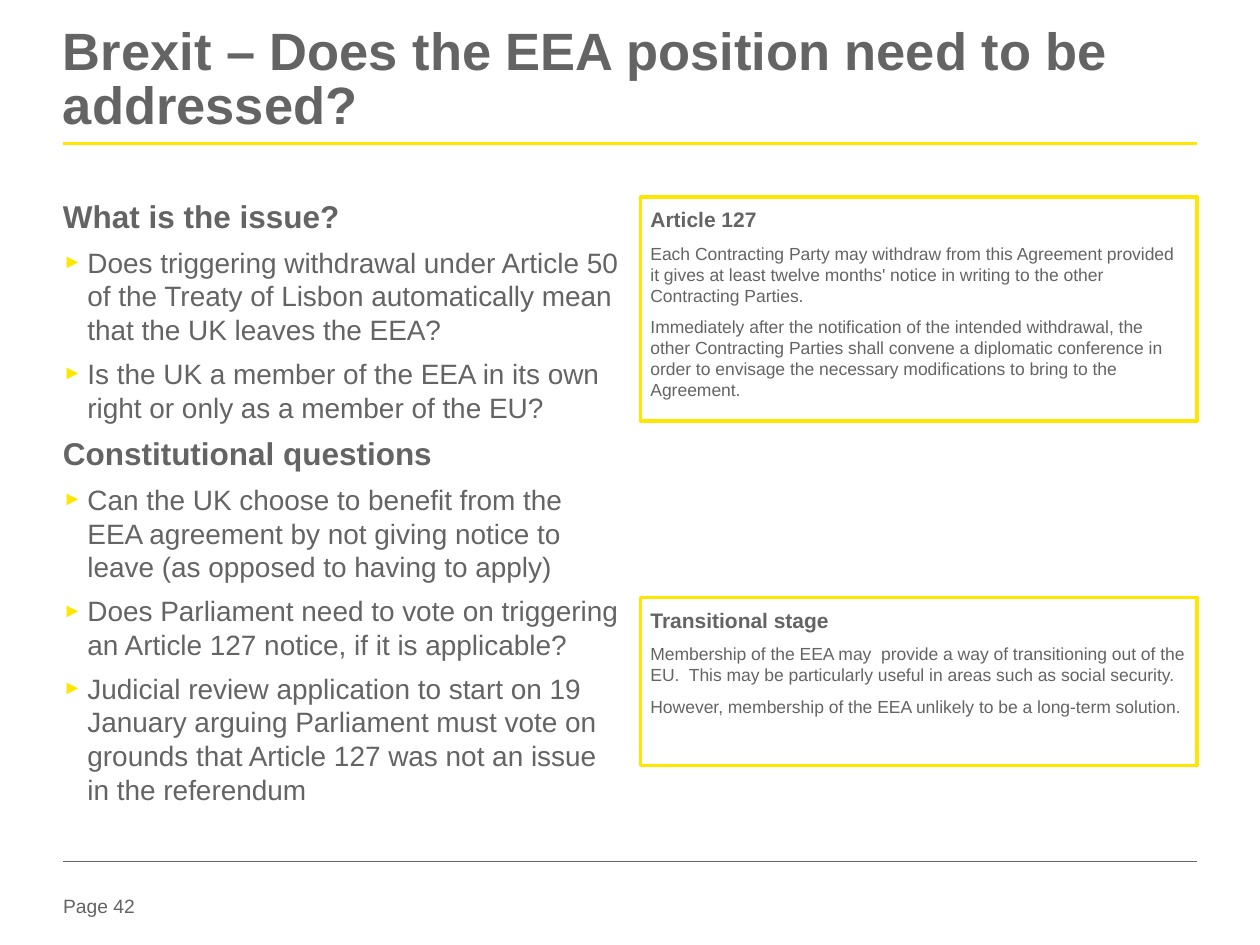
from lxml.etree import SubElement as Sub
from pptx import Presentation
from pptx.dml.color import RGBColor as Rgb
from pptx.enum.shapes import MSO_CONNECTOR as Conn, MSO_SHAPE as Kind
from pptx.enum.text import MSO_ANCHOR as Anchor, PP_ALIGN as Align
from pptx.oxml.ns import qn
from pptx.util import Pt

HUE = {"text": "646464", "accent": "FFE600"}
LEFT, RIGHT = 36, 684
COL = 318  # column width
TOP = 112.5

deck = Presentation()
deck.slide_width, deck.slide_height = Pt(720), Pt(540)
slide = deck.slides.add_slide(deck.slide_layouts[6])
shapes = slide.shapes


def write(shape, paras, inset=0, after=0, line=None):
    """Fill a shape with (text, size, bold, bullet) paragraphs."""
    frame = shape.text_frame
    frame.word_wrap = True
    frame.vertical_anchor = Anchor.TOP
    frame.margin_left = frame.margin_right = Pt(inset)
    frame.margin_top = frame.margin_bottom = Pt(inset)
    for i, (text, size, bold, bullet) in enumerate(paras):
        para = frame.add_paragraph() if i else frame.paragraphs[0]
        para.alignment = Align.LEFT
        para.space_after = Pt(after)
        if line:
            para.line_spacing = line
        run = para.add_run()
        run.text = text
        font = run.font
        font.name, font.size, font.bold = "Arial", Pt(size), bold
        font.color.rgb = Rgb.from_string(HUE["text"])
        if bullet:
            props = para._p.get_or_add_pPr()
            props.set("marL", str(Pt(14)))
            props.set("indent", str(Pt(-14)))
            tint = Sub(props, qn("a:buClr"))
            Sub(tint, qn("a:srgbClr"), val=HUE["accent"])
            Sub(props, qn("a:buSzPct"), val="70000")
            Sub(props, qn("a:buFont"), typeface="Arial")
            Sub(props, qn("a:buChar"), char="►")


# Rules under the title and above the footer
for y, hue, width in [(82, "accent", 1.5), (492, "text", 0.25)]:
    rule = shapes.add_connector(Conn.STRAIGHT, Pt(LEFT), Pt(y), Pt(RIGHT), Pt(y))
    rule.line.color.rgb = Rgb.from_string(HUE[hue])
    rule.line.width = Pt(width)
    Sub(rule._element.spPr, qn("a:effectLst"))

# Title and page number
title = shapes.add_textbox(Pt(LEFT), Pt(16), Pt(RIGHT - LEFT), Pt(67.5))
write(title, [("Brexit – Does the EEA position need to be addressed?", 30, True, False)],
      line=0.85)
page = shapes.add_textbox(Pt(LEFT), Pt(511), Pt(57), Pt(16))
write(page, [("Page 42", 11, False, False)])

# Left column: headings with bullets
topics = {
    "What is the issue?": [
        "Does triggering withdrawal under Article 50 of the Treaty of Lisbon "
        "automatically mean that the UK leaves the EEA?",
        "Is the UK a member of the EEA in its own right or only as a member of the EU?",
    ],
    "Constitutional questions": [
        "Can the UK choose to benefit from the EEA agreement by not giving notice "
        "to leave (as opposed to having to apply)",
        "Does Parliament need to vote on triggering an Article 127 notice, "
        "if it is applicable?",
        "Judicial review application to start on 19 January arguing Parliament must "
        "vote on grounds that Article 127 was not an issue in the referendum",
    ],
}
paras = []
for head, points in topics.items():
    paras.append((head, 18, True, False))
    paras += [(point, 16, False, True) for point in points]
body = shapes.add_textbox(Pt(LEFT), Pt(TOP), Pt(COL), Pt(370))
write(body, paras, after=6)

# Right column: framed notes
notes = [
    (TOP, 128, "Article 127", [
        "Each Contracting Party may withdraw from this Agreement provided it gives "
        "at least twelve months' notice in writing to the other Contracting Parties.",
        "Immediately after the notification of the intended withdrawal, the other "
        "Contracting Parties shall convene a diplomatic conference in order to "
        "envisage the necessary modifications to bring to the Agreement.",
    ]),
    (341.5, 96, "Transitional stage", [
        "Membership of the EEA may  provide a way of transitioning out of the EU.  "
        "This may be particularly useful in areas such as social security.",
        "However, membership of the EEA unlikely to be a long-term solution.",
    ]),
]
for y, height, head, lines in notes:
    box = shapes.add_shape(Kind.RECTANGLE, Pt(RIGHT - COL), Pt(y), Pt(COL), Pt(height))
    box.shadow.inherit = False
    box.fill.background()
    box.line.color.rgb = Rgb.from_string(HUE["accent"])
    box.line.width = Pt(2)
    write(box, [(head, 12, True, False)] + [(text, 10, False, False) for text in lines],
          inset=5.7, after=6)

deck.save("out.pptx")
